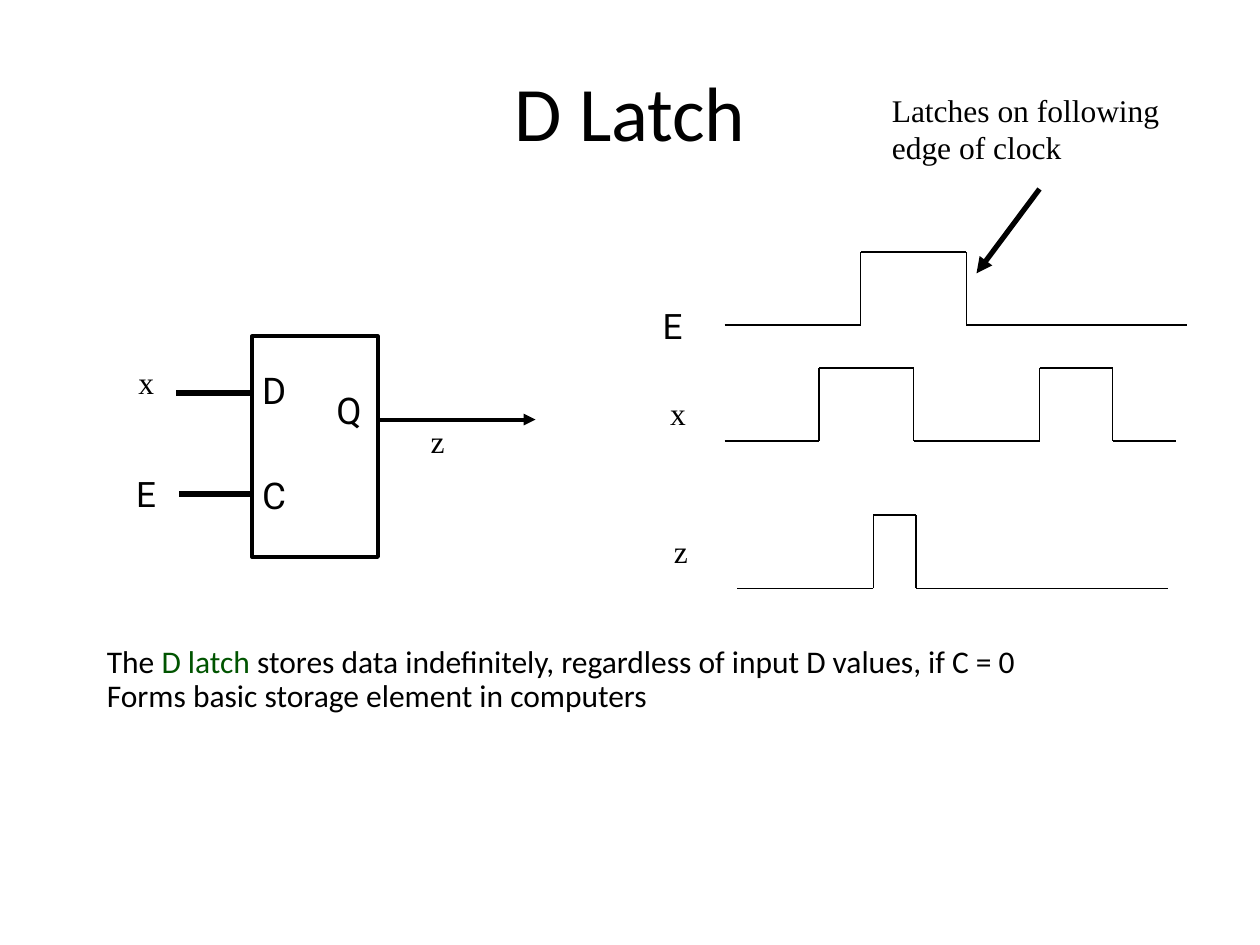
from lxml import etree
from pptx import Presentation
from pptx.dml.color import RGBColor
from pptx.enum.shapes import MSO_CONNECTOR, MSO_SHAPE
from pptx.enum.text import MSO_ANCHOR, PP_ALIGN
from pptx.oxml.ns import qn
from pptx.util import Inches, Pt

STRAIGHT = MSO_CONNECTOR.STRAIGHT
RECTANGLE = MSO_SHAPE.RECTANGLE
TOP, MIDDLE = MSO_ANCHOR.TOP, MSO_ANCHOR.MIDDLE
LEFT, CENTER = PP_ALIGN.LEFT, PP_ALIGN.CENTER
BLACK = RGBColor(0, 0, 0)
GREEN = RGBColor(0x00, 0x54, 0x00)
SANS, SERIF, BODY = "Roboto", "Times New Roman", "Calibri"
PADDING = (0.1, 0.05)

TITLE = [[("D Latch", BLACK)]]
EDGE_NOTE = [[("Latches on following", BLACK)], [("edge of clock", BLACK)]]
SUMMARY = [
    [("The", BLACK), (" D latch ", GREEN),
     ("stores data indefinitely, regardless of input D values, if C = 0", BLACK)],
    [("Forms basic storage element in computers", BLACK)],
]
PIN_LABELS = [
    ("E", 5.26, 2.42, 20),
    ("E", 1.08, 3.75, 20),
    ("D", 2.08, 2.92, 21),
    ("Q", 2.67, 3.08, 21),
    ("C", 2.08, 3.75, 21),
]
SIGNAL_LABELS = [
    ("x", 5.22, 3.08),
    ("z", 5.25, 4.17),
    ("x", 1, 2.83),
    ("z", 3.32, 3.3),
]
PULSE_HEIGHT = 0.58
SIGNALS = [
    {"low": 2.58, "times": [5.75, 6.83, 7.67, 9.42], "later_weight": 0.75},
    {"low": 3.5, "times": [5.75, 6.5, 7.25, 8.25, 8.83, 9.33], "later_weight": 1},
    {"low": 4.67, "times": [5.85, 6.93, 7.27, 9.27], "later_weight": 1},
]
LATCH = (2, 2.67, 1, 1.75)
LATCH_WIRES = [
    ((2, 3.12), (1.4, 3.12), 3, False),
    ((2, 3.92), (1.42, 3.92), 3, False),
    ((3, 3.33), (4.25, 3.33), 2.25, True),
]
EDGE_POINTER = ((8.25, 1.5), (7.75, 2.17), 3, True)

presentation = Presentation()
presentation.slide_width, presentation.slide_height = Inches(10), Inches(7.5)
slide = presentation.slides.add_slide(presentation.slide_layouts[6])


def add_text(paragraphs, left, top, width, height, *, font, size, padding=PADDING,
             align=LEFT, anchor=TOP, spacing=None, hanging=0):
    frame = slide.shapes.add_textbox(
        Inches(left), Inches(top), Inches(width), Inches(height)).text_frame
    frame.word_wrap = True
    frame.vertical_anchor = anchor
    frame.margin_left = frame.margin_right = Inches(padding[0])
    frame.margin_top = frame.margin_bottom = Inches(padding[1])
    for index, runs in enumerate(paragraphs):
        paragraph = frame.add_paragraph() if index else frame.paragraphs[0]
        paragraph.alignment = align
        if spacing:
            paragraph.line_spacing = spacing
        if hanging:
            properties = paragraph._p.get_or_add_pPr()
            properties.set("marL", str(Inches(hanging)))
            properties.set("indent", str(-Inches(hanging)))
        for words, color in runs:
            run = paragraph.add_run()
            run.text = words
            run.font.name, run.font.size = font, Pt(size)
            run.font.color.rgb = color


def add_line(start, end, weight, arrow=False):
    line = slide.shapes.add_connector(
        STRAIGHT, *(Inches(value) for value in (*start, *end)))
    line.line.color.rgb = BLACK
    line.line.width = Pt(weight)
    if arrow:
        etree.SubElement(line.line._get_or_add_ln(), qn("a:tailEnd"), type="triangle")
    etree.SubElement(line._element.spPr, qn("a:effectLst"))


def add_signal(low, times, later_weight):
    levels = (low, low - PULSE_HEIGHT)
    for index, (begin, finish) in enumerate(zip(times, times[1:])):
        level, following = levels[index % 2], levels[(index + 1) % 2]
        add_line((begin, level), (finish, level), later_weight if index else 0.75)
        if finish != times[-1]:
            add_line((finish, level), (finish, following), 0.75)


add_text(TITLE, 0.75, 0.25, 8.5, 1.25, font=BODY, size=44, align=CENTER, anchor=MIDDLE)
for signal in SIGNALS:
    add_signal(**signal)
add_text(EDGE_NOTE, 6.98, 0.67, 2.9, 0.9, font=SERIF, size=18)
add_line(*EDGE_POINTER)

latch = slide.shapes.add_shape(RECTANGLE, *(Inches(value) for value in LATCH))
latch.shadow.inherit = False
latch.fill.background()
latch.line.color.rgb = BLACK
latch.line.width = Pt(2.25)
for wire in LATCH_WIRES:
    add_line(*wire)

for label, left, top, size in PIN_LABELS:
    add_text([[(label, BLACK)]], left, top, 0.28, 0.35, font=SANS, size=size, padding=(0, 0))
for label, left, top in SIGNAL_LABELS:
    add_text([[(label, BLACK)]], left, top, 0.37, 0.5, font=SERIF, size=18)
add_text(SUMMARY, 0.75, 5.08, 8.83, 1.75, font=BODY, size=18, spacing=0.9, hanging=0.38)

presentation.save("out.pptx")
